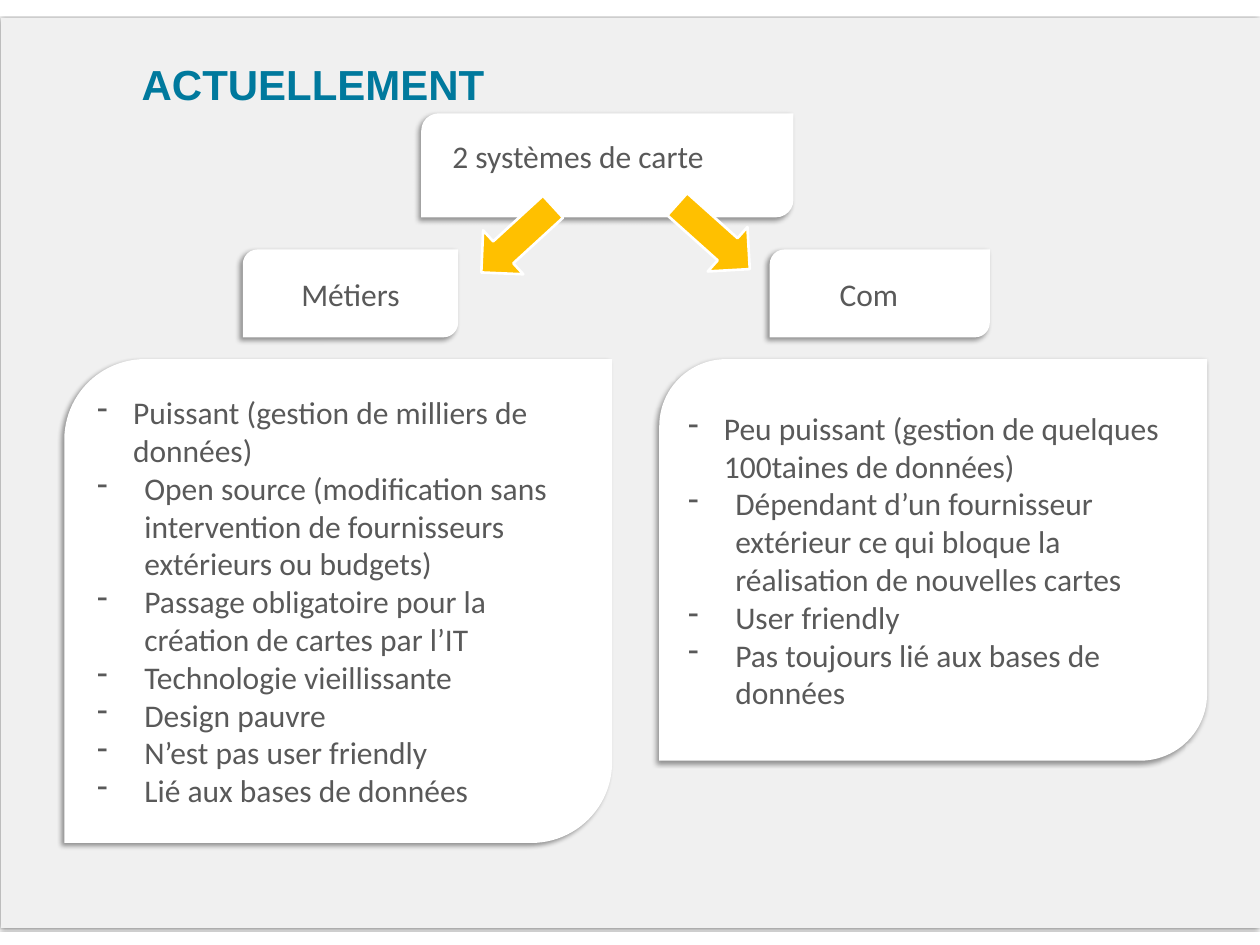
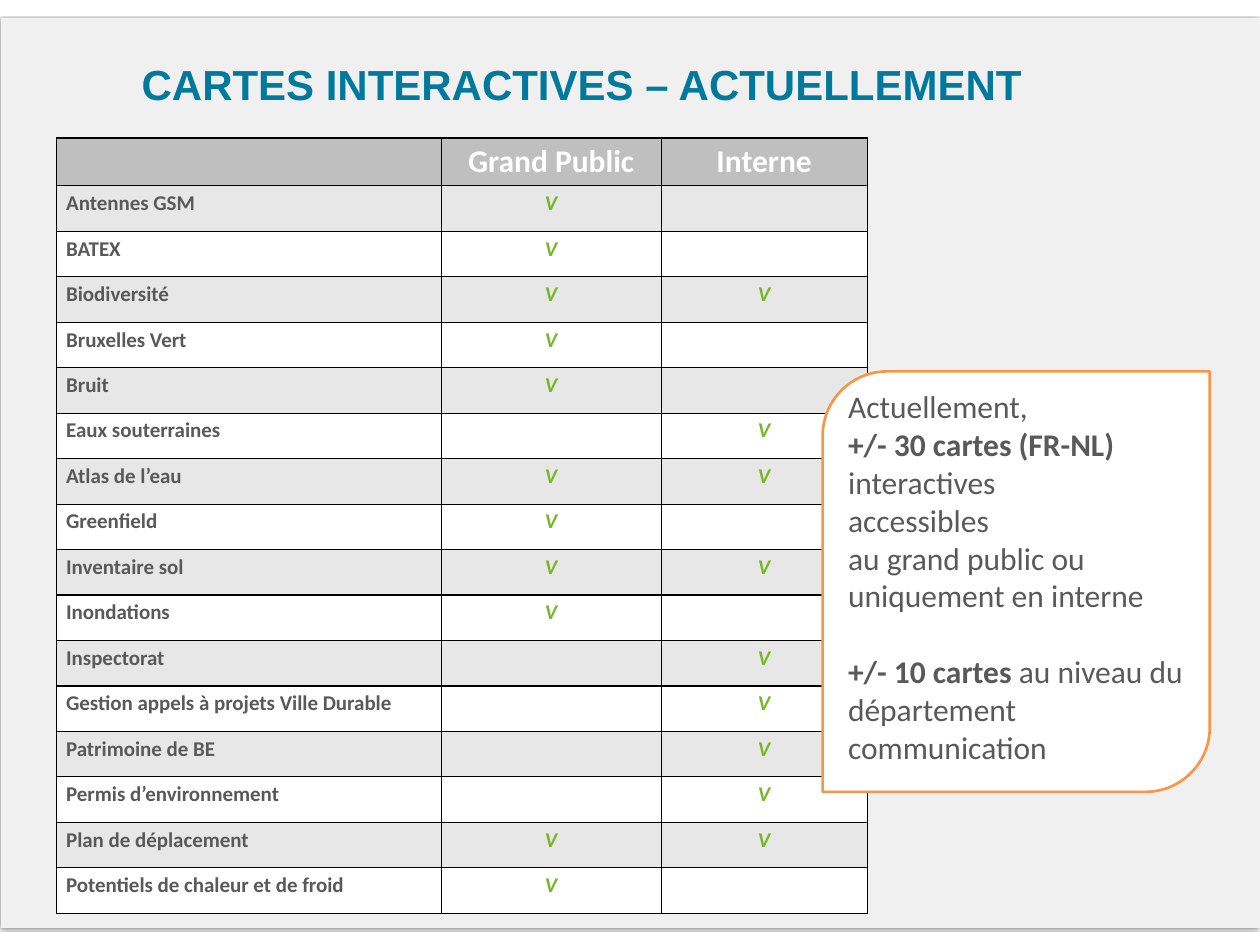
"""Build two slides on the present state of the interactive maps."""
from lxml import etree
from pptx import Presentation
from pptx.dml.color import RGBColor
from pptx.enum.shapes import MSO_SHAPE
from pptx.enum.text import MSO_ANCHOR, MSO_AUTO_SIZE, PP_ALIGN
from pptx.oxml.ns import qn
from pptx.util import Inches, Pt

RECT, LEAF, ARROW = MSO_SHAPE.RECTANGLE, MSO_SHAPE.ROUND_2_DIAG_RECTANGLE, MSO_SHAPE.RIGHT_ARROW
LEFT, CENTER = PP_ALIGN.LEFT, PP_ALIGN.CENTER
TOP = MSO_ANCHOR.TOP
NO_FIT, GROW = MSO_AUTO_SIZE.NONE, MSO_AUTO_SIZE.SHAPE_TO_FIT_TEXT

WHITE = RGBColor(0xFF, 0xFF, 0xFF)
BLACK = RGBColor(0x00, 0x00, 0x00)
PAPER = RGBColor(0xF0, 0xF0, 0xF0)
TEAL = RGBColor(0x00, 0x79, 0x9D)
GREY = RGBColor(0x59, 0x59, 0x59)
AMBER = RGBColor(0xFF, 0xC0, 0x00)
ORANGE = RGBColor(0xF7, 0x96, 0x46)
GREEN = RGBColor(0x77, 0xB7, 0x26)
HEADER = RGBColor(0xBF, 0xBF, 0xBF)
STRIPE = RGBColor(0xE7, 0xE7, 0xE7)

CARD_SHADOW = (40, 4, 3, 135)
BAND_SHADOW = (50, 2, 1, 90)

prs = Presentation()
prs.slide_width, prs.slide_height = Inches(13.34), Inches(10)
COL, ROW = prs.slide_width / 100, prs.slide_height / 100


def add(slide, kind, box, fill=WHITE, line=None, shadow=None):
    """Add a shape, or a text box if kind is None, on the 100 by 100 grid."""
    place = [int(v * unit) for v, unit in zip(box, (COL, ROW, COL, ROW))]
    if kind is None:
        sp = slide.shapes.add_textbox(*place)
        sp.text_frame.word_wrap = True
        sp.text_frame.auto_size = GROW
        return sp
    sp = slide.shapes.add_shape(kind, *place)
    sp.fill.solid()
    sp.fill.fore_color.rgb = fill
    if line is None:
        sp.line.fill.background()
    else:
        sp.line.color.rgb = line
        sp.line.width = Pt(2)
    sp.shadow.inherit = False
    if shadow:
        alpha, blur, dist, angle = shadow
        effects = sp.element.spPr.find(qn("a:effectLst"))
        outer = etree.SubElement(effects, qn("a:outerShdw"), blurRad=str(Pt(blur)), dist=str(Pt(dist)),
                                 dir=str(angle * 60000), algn="ctr", rotWithShape="0")
        clr = etree.SubElement(outer, qn("a:srgbClr"), val=str(BLACK))
        etree.SubElement(clr, qn("a:alpha"), val=str(alpha * 1000))
    return sp


def write(p, text, size=24, color=GREY, bold=False, italic=False, font="Calibri", align=LEFT):
    """Add one run to a paragraph."""
    p.alignment = align
    r = p.add_run()
    r.text = text
    r.font.name, r.font.size, r.font.color.rgb = font, Pt(size), color
    r.font.bold, r.font.italic = bold, italic


layout = prs.slide_layouts[5]
slides = []
for heading, width, height in [("ACTUELLEMENT", 75.94, 8.4), ("CARTES INTERACTIVES – ACTUELLEMENT", 89.96, 9.9)]:
    s = prs.slides.add_slide(layout)
    title = s.shapes.title
    title.left, title.top = int(11.24 * COL), int(6.2 * ROW)
    title.width, title.height = int(width * COL), int(height * ROW)
    tf = title.text_frame
    tf.margin_left = tf.margin_top = tf.margin_right = tf.margin_bottom = 0
    tf.vertical_anchor, tf.auto_size = TOP, NO_FIT
    write(tf.paragraphs[0], heading, 32, TEAL, bold=True, font="Arial")
    slides.append(s)
systems, maps = slides

band = add(systems, RECT, (0.07, 1.9, 99.93, 96.3), PAPER, shadow=BAND_SHADOW)
layout.shapes.element.insert(2, band.element)

add(systems, LEAF, (33.43, 12, 29.54, 11), shadow=CARD_SHADOW)
sp = add(systems, None, (35.16, 14, 25.94, 5))
write(sp.text_frame.paragraphs[0], "2 systèmes de carte")

sp = add(systems, LEAF, (19.27, 26.4, 17.09, 9.3), shadow=CARD_SHADOW)
write(sp.text_frame.paragraphs[0], "Métiers", align=CENTER)
sp = add(systems, LEAF, (61.09, 26.4, 17.47, 9.3), shadow=CARD_SHADOW)
sp.text_frame.margin_left = int(5.2 * COL)
write(sp.text_frame.paragraphs[0], "Com")

for x, y, angle in [(37.18, 22.2, 137.5), (52.77, 21.9, 41.8)]:
    sp = add(systems, ARROW, (x, y, 7.72, 6.3), AMBER, WHITE)
    sp.rotation = angle

panels = [
    (5.1, 51.2, ["Puissant (gestion de milliers de données)",
                 "Open source (modification sans intervention de fournisseurs extérieurs ou budgets)",
                 "Passage obligatoire pour la création de cartes par l’IT",
                 "Technologie vieillissante", "Design pauvre", "N’est pas user friendly",
                 "Lié aux bases de données"]),
    (52.32, 42.5, ["Peu puissant (gestion de quelques 100taines de données)",
                   "Dépendant d’un fournisseur extérieur ce qui bloque la réalisation de nouvelles cartes",
                   "User friendly", "Pas toujours lié aux bases de données"]),
]
for x, height, points in panels:
    tf = add(systems, LEAF, (x, 38, 43.48, height), shadow=CARD_SHADOW).text_frame
    for i, point in enumerate(points):
        p = tf.add_paragraph() if i else tf.paragraphs[0]
        indent = Inches(0.5 if i else 0.38)
        pPr = p._p.get_or_add_pPr()
        pPr.set("marL", str(indent))
        pPr.set("indent", str(-indent))
        etree.SubElement(pPr, qn("a:buChar"), char="-")
        write(p, point)

themes = [
    ("Antennes GSM", "V", ""), ("BATEX", "V", ""), ("Biodiversité", "V", "V"),
    ("Bruxelles Vert", "V", ""), ("Bruit", "V", ""), ("Eaux souterraines", "", "V"),
    ("Atlas de l’eau", "V", "V"), ("Greenfield", "V", ""), ("Inventaire sol", "V", "V"),
    ("Inondations", "V", ""), ("Inspectorat", "", "V"),
    ("Gestion appels à projets Ville Durable", "", "V"), ("Patrimoine de BE", "", "V"),
    ("Permis d’environnement", "", "V"), ("Plan de déplacement", "V", "V"),
    ("Potentiels de chaleur et de froid", "V", ""),
]
rows = [("", "Grand Public", "Interne")] + themes
widths = [30.51, 17.47, 16.34]
table = maps.shapes.add_table(len(rows), len(widths), int(4.5 * COL), int(14.6 * ROW),
                              int(sum(widths) * COL), int(81.8 * ROW)).table
for column, width in zip(table.columns, widths):
    column.width = int(width * COL)
for i, row in enumerate(rows):
    for j, text in enumerate(row):
        cell = table.cell(i, j)
        tcPr = cell._tc.get_or_add_tcPr()
        for side in ("a:lnL", "a:lnR", "a:lnT", "a:lnB"):
            ln = etree.SubElement(tcPr, qn(side), w=str(Pt(1)))
            solid = etree.SubElement(ln, qn("a:solidFill"))
            etree.SubElement(solid, qn("a:srgbClr"), val=str(BLACK))
        cell.fill.solid()
        cell.fill.fore_color.rgb = HEADER if i == 0 else STRIPE if i % 2 else WHITE
        p = cell.text_frame.paragraphs[0]
        if not text:
            continue
        if i == 0:
            write(p, text, 24, WHITE, bold=True, align=CENTER)
        elif j == 0:
            write(p, text, 16, bold=True)
        else:
            write(p, text, 16, GREEN, bold=True, italic=True, align=CENTER)

add(maps, LEAF, (65.29, 39.3, 30.73, 44.5), line=ORANGE)
tf = add(maps, None, (66.57, 40.5, 28.86, 41.4)).text_frame
summary = [
    [("Actuellement,", False)],
    [("+/- 30 cartes (FR-NL) ", True), ("interactives", False)],
    [("accessibles", False)],
    [("au grand public ou", False)],
    [("uniquement en interne", False)],
    [("+/- 10 cartes", True), (" au niveau du département communication", False)],
]
for i, runs in enumerate(summary):
    p = tf.add_paragraph() if i else tf.paragraphs[0]
    for text, bold in runs:
        write(p, text, bold=bold)
p.space_before = Pt(29)

prs.save("out.pptx")
